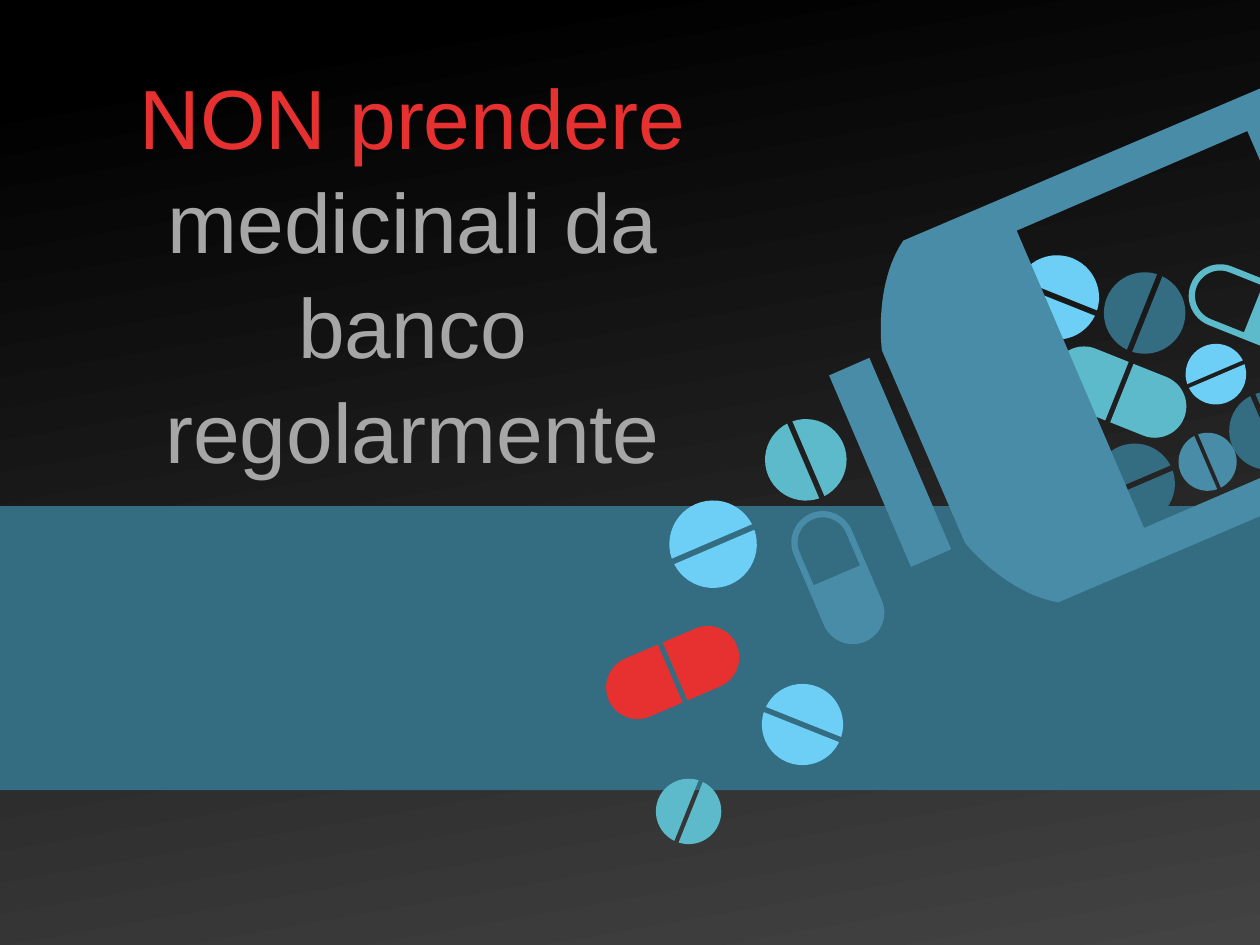
from math import acos, cos, pi, radians, sin

from pptx import Presentation
from pptx.dml.color import RGBColor
from pptx.enum.shapes import MSO_SHAPE
from pptx.enum.text import MSO_ANCHOR, PP_ALIGN
from pptx.util import Pt

RECTANGLE = MSO_SHAPE.RECTANGLE
BOTTOM = MSO_ANCHOR.BOTTOM
CENTER = PP_ALIGN.CENTER

COLORS = {
    "black": "000000",
    "charcoal": "434343",
    "petrol": "346C81",
    "steel": "488CA7",
    "sky": "6DCFF6",
    "teal": "5DBACA",
    "red": "E63130",
    "gray": "A6A6A6",
}
TILT = 21.8  # every pill is turned by this plus a multiple of 45 degrees
UNITS = 100  # freeform units per point
ARC_STEPS = 24


def dome(center, radius, reach, start, turn):
    """Points of a round-ended half: flat edge at start, arc centred at reach."""
    angle = radians(TILT + 45 * turn)
    spread = acos(max(0, start - reach) / radius)
    local = [(start, -radius * sin(spread))]
    for step in range(ARC_STEPS + 1):
        theta = spread * (2 * step / ARC_STEPS - 1)
        local.append((reach + radius * cos(theta), radius * sin(theta)))
    local.append((start, radius * sin(spread)))
    return [(center[0] + x * cos(angle) - y * sin(angle),
             center[1] + x * sin(angle) + y * cos(angle)) for x, y in local]


def add_outline(slide, color, *contours):
    """One filled freeform; a second contour cuts a hole."""
    scaled = [[(round(x * UNITS), round(y * UNITS)) for x, y in contour]
              for contour in contours]
    builder = slide.shapes.build_freeform(*scaled[0][0], scale=Pt(1) / UNITS)
    builder.add_line_segments(scaled[0][1:], close=True)
    for contour in scaled[1:]:
        builder.move_to(*contour[0])
        builder.add_line_segments(contour[1:], close=True)
    shape = builder.convert_to_shape()
    shape.shadow.inherit = False
    shape.fill.solid()
    shape.fill.fore_color.rgb = RGBColor.from_string(COLORS[color])
    shape.line.fill.background()


presentation = Presentation()
presentation.slide_width, presentation.slide_height = Pt(720), Pt(540)
slide = presentation.slides.add_slide(presentation.slide_layouts[6])

# Background gradient
background = slide.background.fill
background.gradient()
background.gradient_angle = 280
for stop, position, color in zip(background.gradient_stops, (0.08, 1), ("black", "charcoal")):
    stop.position = position
    stop.color.rgb = RGBColor.from_string(COLORS[color])

# Horizontal band
band = slide.shapes.add_shape(RECTANGLE, 0, Pt(289.2), Pt(720), Pt(162.3))
band.shadow.inherit = False
band.fill.solid()
band.fill.fore_color.rgb = RGBColor.from_string(COLORS["petrol"])
band.line.fill.background()

# Headline
headline = slide.shapes.add_textbox(Pt(36), Pt(38.2), Pt(399.6), Pt(239.8))
text_frame = headline.text_frame
text_frame.word_wrap = True
text_frame.vertical_anchor = BOTTOM
paragraph = text_frame.paragraphs[0]
paragraph.text = "NON prendere\vmedicinali da banco regolarmente"
paragraph.alignment = CENTER
paragraph.line_spacing = 1.04
for run, color in zip(paragraph.runs, ("red", "gray")):
    run.font.name = "Arial"
    run.font.size = Pt(48)
    run.font.color.rgb = RGBColor.from_string(COLORS[color])

# Round tablets: center, radius, turn of the slit, color
TABLETS = [
    ((604, 170), 24.1, 0, "sky"),
    ((694.8, 213.8), 17.3, -1, "sky"),
    ((724.7, 246.2), 22.3, 1, "petrol"),
    ((690.1, 263.9), 16.6, 1, "steel"),
    ((648.4, 276.5), 23, -1, "petrol"),
    ((458.6, 414), 23.2, 0, "sky"),
    ((460.5, 262.8), 23.3, 1, "teal"),
    ((407.5, 311), 25, -1, "sky"),
    ((393.5, 463.7), 18.7, 2, "teal"),
    ((654.1, 178.9), 23.3, 2, "petrol"),
]
for center, radius, turn, color in TABLETS:
    for side in (-2, 2):
        add_outline(slide, color, dome(center, radius, 0, 0.07 * radius, turn + side))

# Capsules with one hollow half
RADIUS, REACH = 18, 21.8
for center, turn, color in [((478.8, 330.1), 5, "steel"), ((717.5, 177.1), 4, "teal")]:
    body = dome(center, RADIUS, REACH, 0, turn) + dome(center, RADIUS, REACH, 0, turn + 4)
    add_outline(slide, color, body, dome(center, 14.4, REACH, 1.4, turn))

# Split capsules
for center, turn, color in [((384.4, 384.3), -1, "red"), ((639.7, 224.1), 0, "teal")]:
    for side in (0, 4):
        add_outline(slide, color, dome(center, RADIUS, REACH, 1.5, turn + side))

# Bottle neck
add_outline(slide, "steel", [(473.8, 214.6), (520.6, 324), (543.6, 313.9), (496.8, 204.5)])

# Bottle: four Bezier corners joined by straight sides, with a window
CORNERS = [
    [(747.4, 49), (743, 43.2), (732.2, 45.4), (732.2, 45.4)],
    [(516.2, 137.5), (499, 162.7), (504, 200.2), (504, 200.2)],
    [(551.5, 310.3), (551.5, 310.3), (574.6, 339.1), (604.8, 344.2)],
    [(820.8, 252), (820.8, 252), (829.4, 245.5), (828.7, 237.6)],
]
bottle = []
for corner in CORNERS:
    for step in range(ARC_STEPS + 1):
        t = step / ARC_STEPS
        weights = ((1 - t) ** 3, 3 * t * (1 - t) ** 2, 3 * t ** 2 * (1 - t), t ** 3)
        bottle.append(tuple(sum(weight * point[axis] for weight, point in zip(weights, corner))
                            for axis in (0, 1)))
window = [(653.8, 301.7), (581, 131.8), (712.8, 74.9), (786.2, 244.8)]
add_outline(slide, "steel", bottle, window)

presentation.save("out.pptx")
